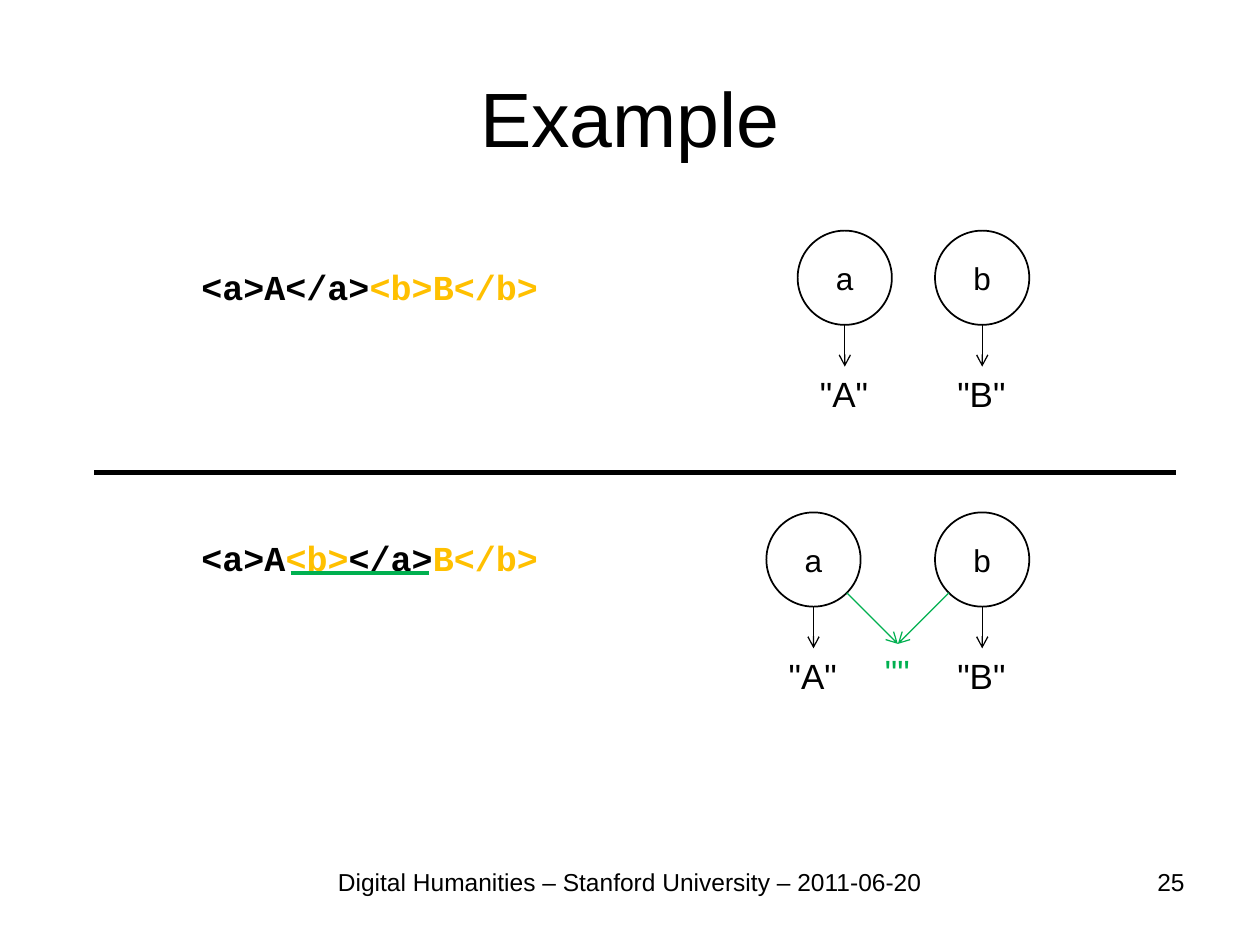
from math import sqrt

from lxml.etree import SubElement
from pptx import Presentation
from pptx.dml.color import RGBColor
from pptx.enum.shapes import MSO_CONNECTOR as Connector, MSO_SHAPE as Shape
from pptx.enum.text import MSO_ANCHOR as Anchor, PP_ALIGN as Align
from pptx.oxml.ns import qn
from pptx.util import Cm, Pt

BLACK, ORANGE, GREEN = "000000", "FFC000", "00B050"
DIAMETER = 1.9
ARROW_DROP = 0.84
LABEL_HEIGHT = 1.12
B_CENTER = 19.8


def rgb(value):
    return RGBColor.from_string(value)


def add_text(slide, box, runs, size, align=Align.LEFT, anchor=Anchor.TOP,
             wrap=True, font="Arial", bold=False):
    """Add a one-line text box; runs are (text, colour) pairs."""
    shape = slide.shapes.add_textbox(*map(Cm, box))
    frame = shape.text_frame
    frame.word_wrap = wrap
    frame.vertical_anchor = anchor
    paragraph = frame.paragraphs[0]
    paragraph.alignment = align
    paragraph.font.name = font
    paragraph.font.size = Pt(size)
    paragraph.font.bold = bold
    for text, color in runs:
        run = paragraph.add_run()
        run.text = text
        run.font.color.rgb = rgb(color)
    return shape


def add_markup(slide, top, runs):
    add_text(slide, (3.81, top, 7.34, LABEL_HEIGHT), runs, 20, wrap=False,
             font="Courier New", bold=True)


def add_label(slide, center, top, width, text, color=BLACK):
    box = (center - width / 2, top, width, LABEL_HEIGHT)
    return add_text(slide, box, [(text, color)], 20, wrap=False)


def add_line(slide, start, end, color, weight):
    line = slide.shapes.add_connector(Connector.STRAIGHT, *map(Cm, start + end))
    line.line.color.rgb = rgb(color)
    line.line.width = Pt(weight)
    SubElement(line._element.spPr, qn("a:effectLst"))
    return line


def add_arrow(slide, start, label, color=BLACK):
    """Draw an arrow from a point to the top middle of a label."""
    arrow = add_line(slide, start, start, color, 0.75)
    arrow.end_connect(label, 0)
    SubElement(arrow.line._get_or_add_ln(), qn("a:tailEnd"), type="arrow")


def add_node(slide, center, top, name):
    """Add an element circle with an arrow down to its quoted content."""
    circle = slide.shapes.add_shape(
        Shape.OVAL, Cm(center - DIAMETER / 2), Cm(top), Cm(DIAMETER), Cm(DIAMETER))
    circle.shadow.inherit = False
    circle.fill.background()
    circle.line.color.rgb = rgb(BLACK)
    circle.line.width = Pt(1)
    frame = circle.text_frame
    frame.word_wrap = False
    frame.vertical_anchor = Anchor.MIDDLE
    paragraph = frame.paragraphs[0]
    paragraph.text = name
    paragraph.alignment = Align.CENTER
    paragraph.font.name = "Arial"
    paragraph.font.size = Pt(18)
    paragraph.font.color.rgb = rgb(BLACK)

    bottom = top + DIAMETER
    label = add_label(slide, center, bottom + ARROW_DROP, 1.5, f'"{name.upper()}"')
    add_arrow(slide, (center, bottom), label)


def add_shared_child(slide, a_center, top):
    """Add the empty text that both overlapping elements contain."""
    label = add_label(slide, (a_center + B_CENTER) / 2, 12.98, 1.02, '""', GREEN)
    radius = DIAMETER / 2
    offset = radius / sqrt(2)
    for x in (a_center + offset, B_CENTER - offset):
        add_arrow(slide, (x, top + radius + offset), label, GREEN)


def main():
    presentation = Presentation()
    presentation.slide_width = Cm(25.4)
    presentation.slide_height = Cm(19.05)
    slide = presentation.slides.add_slide(presentation.slide_layouts[6])

    add_text(slide, (1.27, 0.76, 22.86, 3.18), [("Example", BLACK)], 44,
             Align.CENTER, Anchor.MIDDLE)
    add_text(slide, (5.93, 17.35, 13.54, 1.32),
             [("Digital Humanities – Stanford University – 2011-06-20", BLACK)],
             14, Align.CENTER)
    add_text(slide, (18.21, 17.35, 5.92, 1.32), [("25", BLACK)], 14, Align.RIGHT)

    add_markup(slide, 5.23, [("<a>A</a>", BLACK), ("<b>B</b>", ORANGE)])
    add_markup(slide, 10.69, [("<a>A", BLACK), ("<b>", ORANGE),
                              ("</a>", BLACK), ("B</b>", ORANGE)])

    separate_top, overlap_top = 4.65, 10.33
    separate_a, overlap_a = 17.03, 16.4
    for a_center, top in ((separate_a, separate_top), (overlap_a, overlap_top)):
        add_node(slide, B_CENTER, top, "b")
        add_node(slide, a_center, top, "a")
    add_shared_child(slide, overlap_a, overlap_top)

    add_line(slide, (1.9, 9.52), (23.7, 9.52), BLACK, 3)
    add_line(slide, (5.86, 11.55), (8.65, 11.55), GREEN, 2.25)

    presentation.save("out.pptx")


if __name__ == "__main__":
    main()
